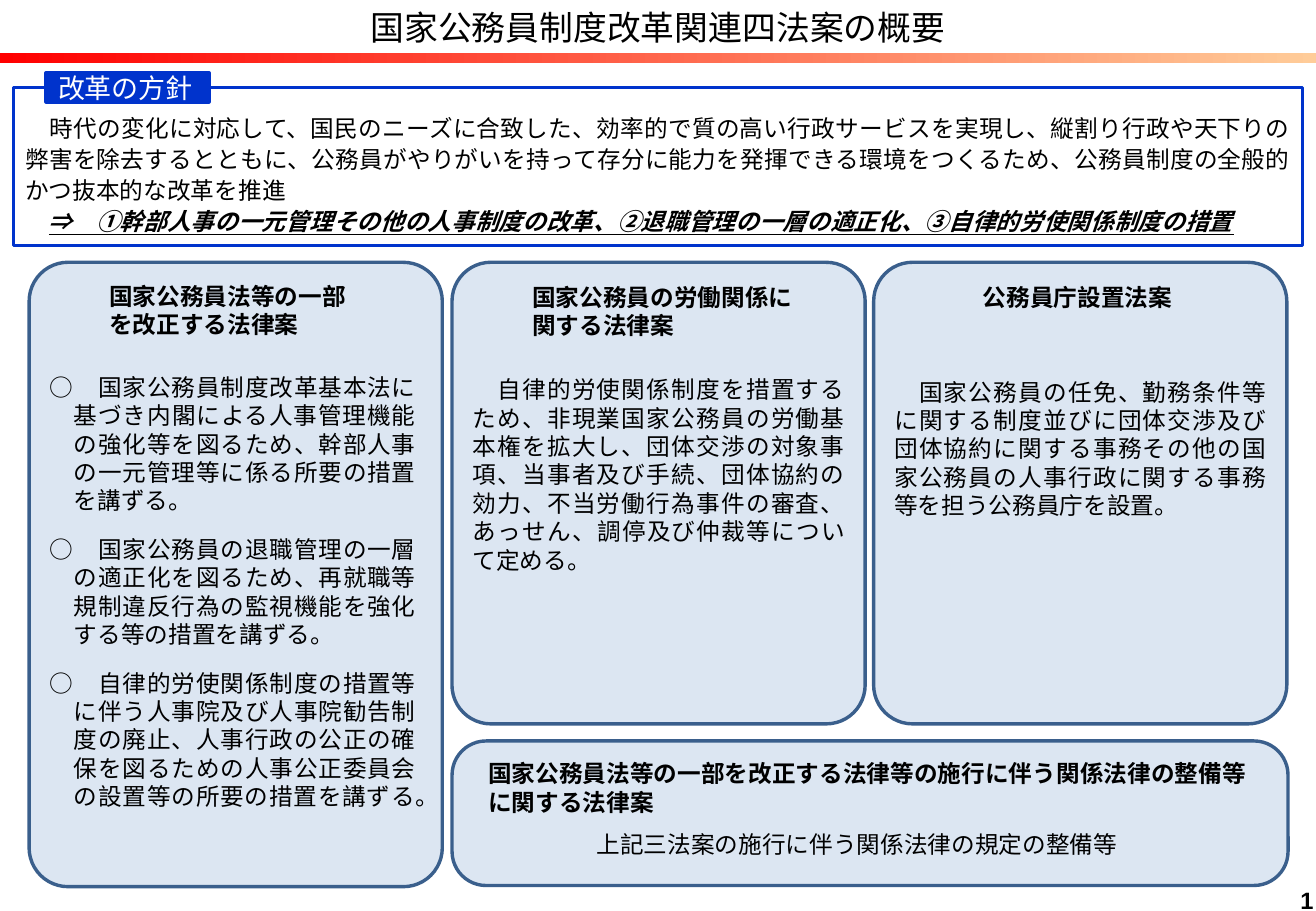
from lxml import etree
from pptx import Presentation
from pptx.dml.color import RGBColor
from pptx.enum.shapes import MSO_SHAPE as SHAPE
from pptx.enum.text import MSO_ANCHOR as ANCHOR, MSO_AUTO_SIZE as AUTO, PP_ALIGN as ALIGN
from pptx.oxml.ns import qn
from pptx.util import Inches, Pt

GOTHIC = "Noto Sans CJK JP"
BLUE, PALE, EDGE = "0033CC", "DCE6F2", "3A5F8C"
COLUMN_WIDTH, COLUMN_TOP = 3.4, 2.16

POLICY = (
    "時代の変化に対応して、国民のニーズに合致した、効率的で質の高い行政サービスを実現し、"
    "縦割り行政や天下りの弊害を除去するとともに、公務員がやりがいを持って存分に能力を発揮できる"
    "環境をつくるため、公務員制度の全般的かつ抜本的な改革を推進"
)
PILLARS = "⇒　①幹部人事の一元管理その他の人事制度の改革、②退職管理の一層の適正化、③自律的労使関係制度の措置"
MEASURES = [
    "○　国家公務員制度改革基本法に基づき内閣による人事管理機能の強化等を図るため、"
    "幹部人事の一元管理等に係る所要の措置を講ずる。",
    "○　国家公務員の退職管理の一層の適正化を図るため、再就職等規制違反行為の監視機能を強化する等の措置を講ずる。",
    "○　自律的労使関係制度の措置等に伴う人事院及び人事院勧告制度の廃止、"
    "人事行政の公正の確保を図るための人事公正委員会の設置等の所要の措置を講ずる。",
]
LABOR = (
    "　自律的労使関係制度を措置するため、非現業国家公務員の労働基本権を拡大し、団体交渉の対象事項、"
    "当事者及び手続、団体協約の効力、不当労働行為事件の審査、あっせん、調停及び仲裁等について定める。"
)
AGENCY = (
    "　国家公務員の任免、勤務条件等に関する制度並びに団体交渉及び団体協約に関する事務"
    "その他の国家公務員の人事行政に関する事務等を担う公務員庁を設置。"
)
BILL_PANELS = [(7.19, 3.8), (3.72, 3.8), (0.24, 5.14)]
BILL_HEADINGS = [
    ("国家公務員法等の一部を改正する法律案", (0.8, 2.27, 2.33, 0.57)),
    ("国家公務員の労働関係に関する法律案", (4.28, 2.28, 2.39, 0.57)),
    ("公務員庁設置法案", (7.99, 2.28, 1.81, 0.34)),
    ("国家公務員法等の一部を改正する法律等の施行に伴う関係法律の整備等に関する法律案", (3.92, 6.2, 6.54, 0.57)),
]


def rgb(value):
    """Turn a hex string into a colour."""
    return RGBColor.from_string(value)


def style(paragraph, size=14, face="Arial", color="000000", bold=False, align=ALIGN.LEFT):
    """Set the font and alignment of a paragraph."""
    paragraph.alignment = align
    font = paragraph.font
    font.size, font.name, font.bold = Pt(size), face, bold
    font.color.rgb = rgb(color)
    east_asian = etree.SubElement(paragraph._p.pPr.find(qn("a:defRPr")), qn("a:ea"))
    east_asian.set("typeface", GOTHIC)


def indent(paragraph, left, first):
    """Set the left margin and first-line indent in inches."""
    paragraph._p.pPr.set("marL", str(Inches(left)))
    paragraph._p.pPr.set("indent", str(Inches(first)))


def add_box(slide, kind, place, fill=None, line=None, radius=None):
    """Add a flat preset shape at a place in inches."""
    box = slide.shapes.add_shape(kind, *map(Inches, place))
    box.shadow.inherit = False
    if fill:
        box.fill.solid()
        box.fill.fore_color.rgb = rgb(fill)
    else:
        box.fill.background()
    if line:
        box.line.color.rgb = rgb(line)
        box.line.width = Pt(2)
    else:
        box.line.fill.background()
    if radius:
        box.adjustments[0] = radius / min(place[2:])
    return box


def add_text(slide, lines, place, **font):
    """Add a wrapping text box with one paragraph per line."""
    frame = slide.shapes.add_textbox(*map(Inches, place)).text_frame
    frame.word_wrap = True
    frame.text = "\n".join(lines)
    for paragraph in frame.paragraphs:
        style(paragraph, **font)
    return frame


def add_title(slide):
    """Place the slide title and the gradient rule under it."""
    title = slide.shapes.title
    title.left, title.top, title.width, title.height = map(Inches, (0, 0, 10.83, 0.44))
    frame = title.text_frame
    frame.text = "国家公務員制度改革関連四法案の概要"
    frame.word_wrap, frame.auto_size = False, AUTO.NONE
    frame.vertical_anchor = ANCHOR.MIDDLE
    style(frame.paragraphs[0], 20, GOTHIC, align=ALIGN.CENTER)
    rule = add_box(slide, SHAPE.RECTANGLE, (0, 0.44, 10.83, 0.08))
    rule.fill.gradient()
    rule.fill.gradient_angle = 0
    for stop, color in zip(rule.fill.gradient_stops, ("FF0000", "FFCC99")):
        stop.color.rgb = rgb(color)


def add_policy(slide):
    """Add the framed reform policy and its label."""
    frame = add_box(slide, SHAPE.RECTANGLE, (0.11, 0.72, 10.61, 1.3), line=BLUE).text_frame
    frame.word_wrap = True
    frame.vertical_anchor = ANCHOR.BOTTOM
    frame.margin_bottom = Inches(0.08)
    policy, pillars = frame.paragraphs[0], frame.add_paragraph()
    policy.text = POLICY
    pillars.add_run().text = "　"
    emphasis = pillars.add_run()
    emphasis.text = PILLARS
    emphasis.font.bold = emphasis.font.italic = emphasis.font.underline = True
    for paragraph, left, first in ((policy, 0, 0.2), (pillars, 0.59, -0.59)):
        paragraph.line_spacing = 1.1
        style(paragraph, face=GOTHIC, align=ALIGN.JUSTIFY)
        indent(paragraph, left, first)
    policy.space_before = Pt(18)

    label = add_box(slide, SHAPE.RECTANGLE, (0.38, 0.6, 1.34, 0.24), BLUE, BLUE).text_frame
    label.text = "改革の方針"
    label.vertical_anchor = ANCHOR.MIDDLE
    style(label.paragraphs[0], 16, color="FFFFFF")


def add_bills(slide):
    """Add the panels, headings and contents of the four bills."""
    for left, height in BILL_PANELS:
        add_box(slide, SHAPE.ROUNDED_RECTANGLE, (left, COLUMN_TOP, COLUMN_WIDTH, height), PALE, EDGE, 0.32)
    add_box(slide, SHAPE.ROUNDED_RECTANGLE, (3.72, 6.1, 6.88, 1.19), PALE, EDGE, 0.28)
    for heading, place in BILL_HEADINGS:
        add_text(slide, [heading], place, bold=True)
    add_text(slide, [LABOR], (3.79, 3.04, 3.26, 1.51), align=ALIGN.JUSTIFY)
    add_text(slide, [AGENCY], (7.26, 3.06, 3.26, 1.28), align=ALIGN.JUSTIFY)
    measures = add_text(slide, MEASURES, (0.31, 3.02, 3.21, 3.74), face=GOTHIC, align=ALIGN.JUSTIFY)
    for number, measure in enumerate(measures.paragraphs):
        indent(measure, 0.2, -0.2)
        measure.space_before = Pt(12 if number else 0)
    add_text(slide, ["上記三法案の施行に伴う関係法律の規定の整備等"], (4.81, 6.78, 4.49, 0.34))


def main():
    """Build and save the overview of the four reform bills."""
    deck = Presentation()
    deck.slide_width, deck.slide_height = Inches(10.83), Inches(7.5)
    slide = deck.slides.add_slide(deck.slide_layouts[5])
    add_title(slide)
    add_policy(slide)
    add_bills(slide)
    add_text(slide, ["1"], (10.54, 7.24, 0.43, 0.28), bold=True, align=ALIGN.CENTER)
    deck.save("out.pptx")


if __name__ == "__main__":
    main()
